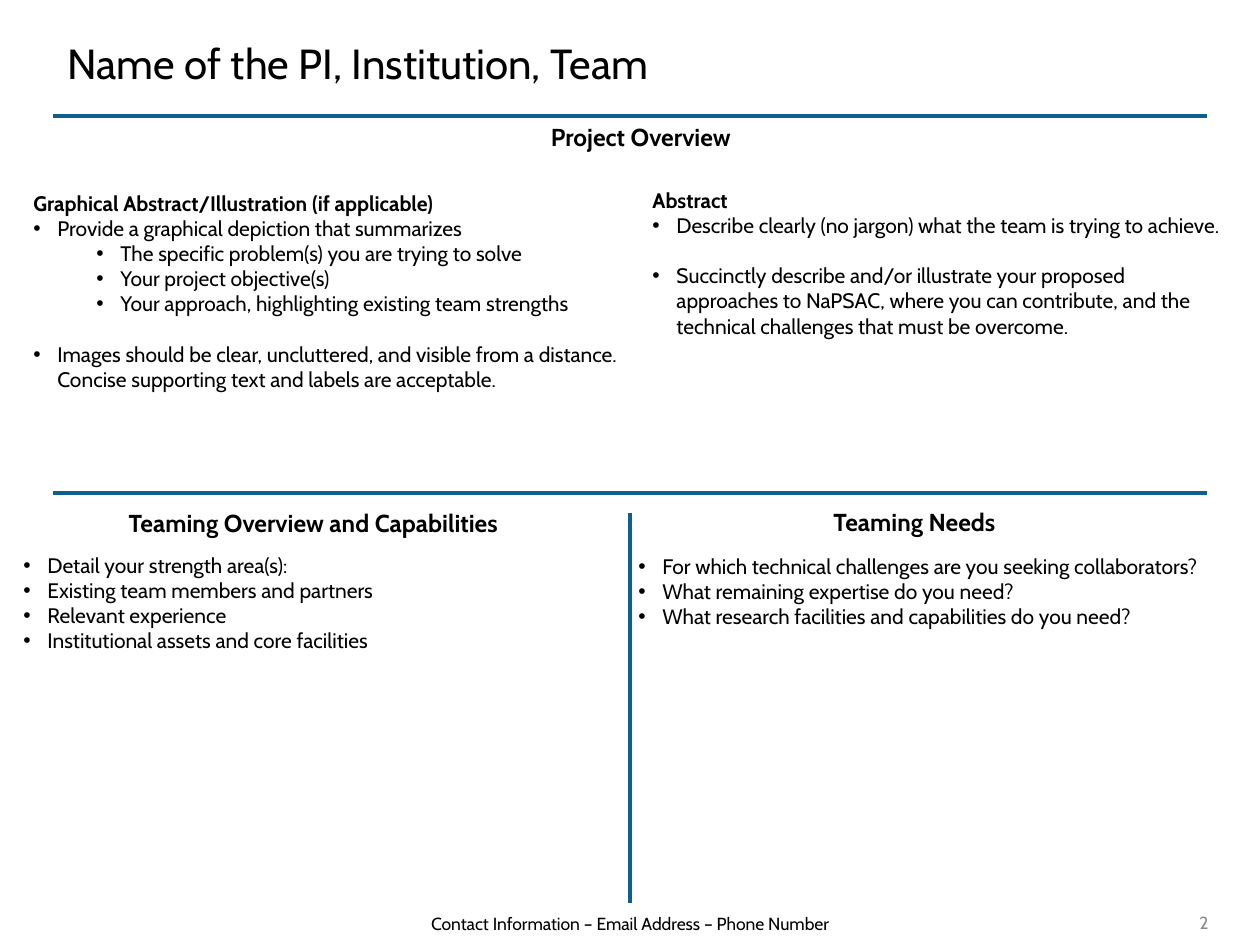
import pptx
import pptx.util
import pptx.dml.color
import pptx.enum.shapes
import pptx.enum.text
import pptx.oxml.ns
import lxml.etree

SCALE = 914400 / 126
COLORS = {"text": "000000", "rule": "0F5E90", "number": "898989"}
ALIGN = pptx.enum.text.PP_ALIGN
ANCHOR = pptx.enum.text.MSO_ANCHOR
INDENTS = [24, 87]
LINE_GAP = 14.4


def px(length):
    return pptx.util.Emu(round(length * SCALE))


def write(frame, entries, size, color="text", align=ALIGN.LEFT, anchor=ANCHOR.TOP):
    frame.word_wrap = True
    frame.auto_size = pptx.enum.text.MSO_AUTO_SIZE.NONE
    frame.vertical_anchor = anchor
    frame.text = "\n".join(text for text, level, bold, gap in entries)
    for paragraph, (text, level, bold, gap) in zip(frame.paragraphs, entries):
        if level is not None:
            properties = paragraph._p.get_or_add_pPr()
            properties.set("marL", str(px(INDENTS[level])))
            properties.set("indent", str(-px(INDENTS[0])))
            bullet_font = lxml.etree.SubElement(properties, pptx.oxml.ns.qn("a:buFont"))
            bullet_font.set("typeface", "Arial")
            bullet = lxml.etree.SubElement(properties, pptx.oxml.ns.qn("a:buChar"))
            bullet.set("char", "•")
            paragraph.level = level
        paragraph.alignment = align
        if gap:
            paragraph.space_before = pptx.util.Pt(gap)
        for run in paragraph.runs:
            run.font.name = "Cabin"
            run.font.size = pptx.util.Pt(size)
            run.font.bold = bold
            run.font.color.rgb = pptx.dml.color.RGBColor.from_string(COLORS[color])


deck = pptx.Presentation()
deck.slide_width = px(1260)
deck.slide_height = px(945)
slide = deck.slides.add_slide(deck.slide_layouts[5])

title = slide.shapes.title
title.left, title.top, title.width, title.height = map(px, (55, 21, 984, 84))
write(title.text_frame, [("Name of the PI, Institution, Team", None, False, 0)],
      24, anchor=ANCHOR.MIDDLE)

for ends in [(53, 116, 1207, 116), (53, 493, 1207, 493), (630, 513, 630, 903)]:
    rule = slide.shapes.add_connector(
        pptx.enum.shapes.MSO_CONNECTOR.STRAIGHT, *map(px, ends))
    rule.line.color.rgb = pptx.dml.color.RGBColor.from_string(COLORS["rule"])
    rule.line.width = pptx.util.Pt(1.75)
    lxml.etree.SubElement(rule._element.spPr, pptx.oxml.ns.qn("a:effectLst"))

headings = [
    ("Project Overview", (326, 116, 630, 42)),
    ("Teaming Overview and Capabilities", (59, 502, 509, 42)),
    ("Teaming Needs", (660, 501, 509, 42)),
]
for heading, place in headings:
    heading_box = slide.shapes.add_textbox(*map(px, place))
    write(heading_box.text_frame, [(heading, None, True, 0)], 14, align=ALIGN.CENTER)

sections = [
    ((21, 184, 614, 254), [
        ("Graphical Abstract/Illustration (if applicable)", None, True, 0),
        ("Provide a graphical depiction that summarizes", 0, False, 0),
        ("The specific problem(s) you are trying to solve", 1, False, 0),
        ("Your project objective(s)", 1, False, 0),
        ("Your approach, highlighting existing team strengths", 1, False, 0),
        ("Images should be clear, uncluttered, and visible from a distance. "
         "Concise supporting text and labels are acceptable.", 0, False, LINE_GAP),
    ]),
    ((640, 181, 599, 190), [
        ("Abstract", None, True, 0),
        ("Describe clearly (no jargon) what the team is trying to achieve.", 0, False, 0),
        ("Succinctly describe and/or illustrate your proposed approaches to NaPSAC, "
         "where you can contribute, and the technical challenges that must be overcome.",
         0, False, LINE_GAP),
    ]),
    ((11, 546, 599, 140), [
        ("Detail your strength area(s):", 0, False, 0),
        ("Existing team members and partners", 0, False, 0),
        ("Relevant experience", 0, False, 0),
        ("Institutional assets and core facilities", 0, False, 0),
    ]),
    ((626, 547, 630, 89), [
        ("For which technical challenges are you seeking collaborators?", 0, False, 0),
        ("What remaining expertise do you need?", 0, False, 0),
        ("What research facilities and capabilities do you need?", 0, False, 0),
    ]),
]
for place, entries in sections:
    section = slide.shapes.add_textbox(*map(px, place))
    write(section.text_frame, entries, 12)

footers = [
    ("Contact Information – Email Address – Phone Number",
     (184, 902, 892, 42), "text", ALIGN.CENTER),
    ("2", (1116, 903, 105, 40), "number", ALIGN.RIGHT),
]
for footer, place, color, align in footers:
    footer_box = slide.shapes.add_textbox(*map(px, place))
    write(footer_box.text_frame, [(footer, None, False, 0)], 10, color, align, ANCHOR.MIDDLE)

deck.save("out.pptx")
